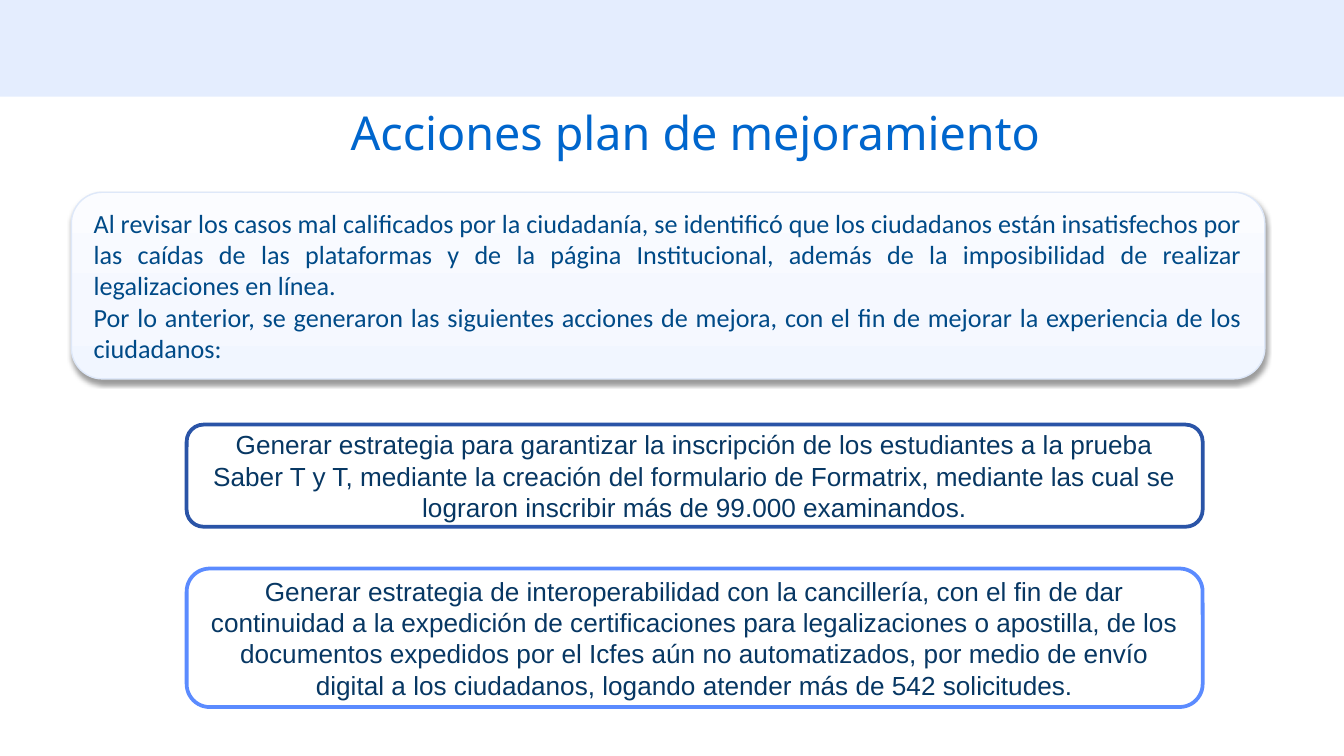
from dataclasses import dataclass

from lxml import etree
from pptx import Presentation
from pptx.dml.color import RGBColor
from pptx.enum import shapes, text
from pptx.oxml import ns, parse_xml
from pptx.util import Pt


@dataclass(frozen=True)
class Theme:
    band: str = "E4EDFE"
    title: str = "0066CD"
    intro: str = "004A87"
    action: str = "073763"
    white: str = "FFFFFF"
    panel_line: str = "DEE8F9"
    panel_stops: tuple = ((0, "F1F6FF"), (35, "F5F8FF"), (100, "FBFCFF"))
    title_size: float = 25
    body_size: float = 14


THEME = Theme()
WIDTH, HEIGHT = 720, 405
ACTION_LEFT, ACTION_WIDTH = 100, 544.3

INTRO = (
    "Al revisar los casos mal calificados por la ciudadanía, se identificó que los "
    "ciudadanos están insatisfechos por las caídas de las plataformas y de la página "
    "Institucional, además de la imposibilidad de realizar legalizaciones en línea.",
    "Por lo anterior, se generaron las siguientes acciones de mejora, con el fin de "
    "mejorar la experiencia de los ciudadanos:",
)
ACTIONS = (
    (227.5, 54.7, "2A54A7",
     "Generar estrategia para garantizar la inscripción de los estudiantes a la prueba "
     "Saber T y T, mediante la creación del formulario de Formatrix, mediante las cual se "
     "lograron inscribir más de 99.000 examinandos."),
    (304.6, 74.2, "5B8BFF",
     "Generar estrategia de interoperabilidad con la cancillería, con el fin de dar "
     "continuidad a la expedición de certificaciones para legalizaciones o apostilla, de "
     "los documentos expedidos por el Icfes aún no automatizados, por medio de envío "
     "digital a los ciudadanos, logando atender más de 542 solicitudes."),
)


def write(box, paragraphs, font, size, color, align):
    frame = box.text_frame
    frame.word_wrap = True
    frame.vertical_anchor = text.MSO_ANCHOR.MIDDLE
    frame.text = "\n".join(paragraphs)
    for para in frame.paragraphs:
        para.alignment = align
        for span in para.runs:
            span.font.name = font
            span.font.size = Pt(size)
            span.font.color.rgb = RGBColor.from_string(color)


def add_block(page, kind, bounds, fill, line=None, weight=0):
    block = page.shapes.add_shape(kind, *map(Pt, bounds))
    block.shadow.inherit = False
    block.fill.solid()
    block.fill.fore_color.rgb = RGBColor.from_string(fill)
    if line:
        block.line.color.rgb = RGBColor.from_string(line)
        block.line.width = Pt(weight)
    else:
        block.line.fill.background()
    return block


def add_title(page, bounds, wording):
    box = page.shapes.add_textbox(*map(Pt, bounds))
    write(box, [wording], "Noto Sans", THEME.title_size, THEME.title, text.PP_ALIGN.LEFT)
    frame = box.text_frame
    frame.margin_left = frame.margin_right = Pt(5)
    frame.margin_top = frame.margin_bottom = Pt(2.9)
    frame.paragraphs[0].line_spacing = 0.9


def apply_gradient(block, stops):
    block.fill.gradient()
    block.fill.gradient_angle = 90
    stop_list = block._element.spPr.find(".//" + ns.qn("a:gsLst"))
    for stop in list(stop_list):
        stop_list.remove(stop)
    for position, color in stops:
        stop_list.append(parse_xml(
            f'<a:gs {ns.nsdecls("a")} pos="{position * 1000}">'
            f'<a:srgbClr val="{color}"/></a:gs>'))


def apply_shadow(block, color, opacity, blur, distance):
    effects = block._element.spPr.find(ns.qn("a:effectLst"))
    shadow = etree.SubElement(
        effects, ns.qn("a:outerShdw"), blurRad=str(Pt(blur)), dist=str(Pt(distance)),
        dir="5400000", rotWithShape="0")
    tint = etree.SubElement(shadow, ns.qn("a:srgbClr"), val=color)
    etree.SubElement(tint, ns.qn("a:alpha"), val=str(opacity * 1000))


def add_intro(page, bounds):
    panel = add_block(page, shapes.MSO_SHAPE.ROUNDED_RECTANGLE, bounds,
                      THEME.white, THEME.panel_line, 0.75)
    apply_gradient(panel, THEME.panel_stops)
    apply_shadow(panel, "000000", 38, 3.1, 1.6)
    write(panel, INTRO, "Calibri", THEME.body_size, THEME.intro, text.PP_ALIGN.JUSTIFY)


def add_action(page, top, height, line, wording):
    card = add_block(page, shapes.MSO_SHAPE.ROUNDED_RECTANGLE,
                     (ACTION_LEFT, top, ACTION_WIDTH, height), THEME.white, line, 2)
    write(card, [wording], "Arial", THEME.body_size, THEME.action, text.PP_ALIGN.CENTER)


def main():
    deck = Presentation()
    deck.slide_width, deck.slide_height = Pt(WIDTH), Pt(HEIGHT)
    page = deck.slides.add_slide(deck.slide_layouts[6])
    add_block(page, shapes.MSO_SHAPE.RECTANGLE, (0, 0, WIDTH, 51.8), THEME.band)
    add_title(page, (182.9, 52.6, 414, 40.3), "Acciones plan de mejoramiento")
    add_intro(page, (38.2, 103, 639.4, 100))
    for action in ACTIONS:
        add_action(page, *action)
    deck.save("out.pptx")


if __name__ == "__main__":
    main()
